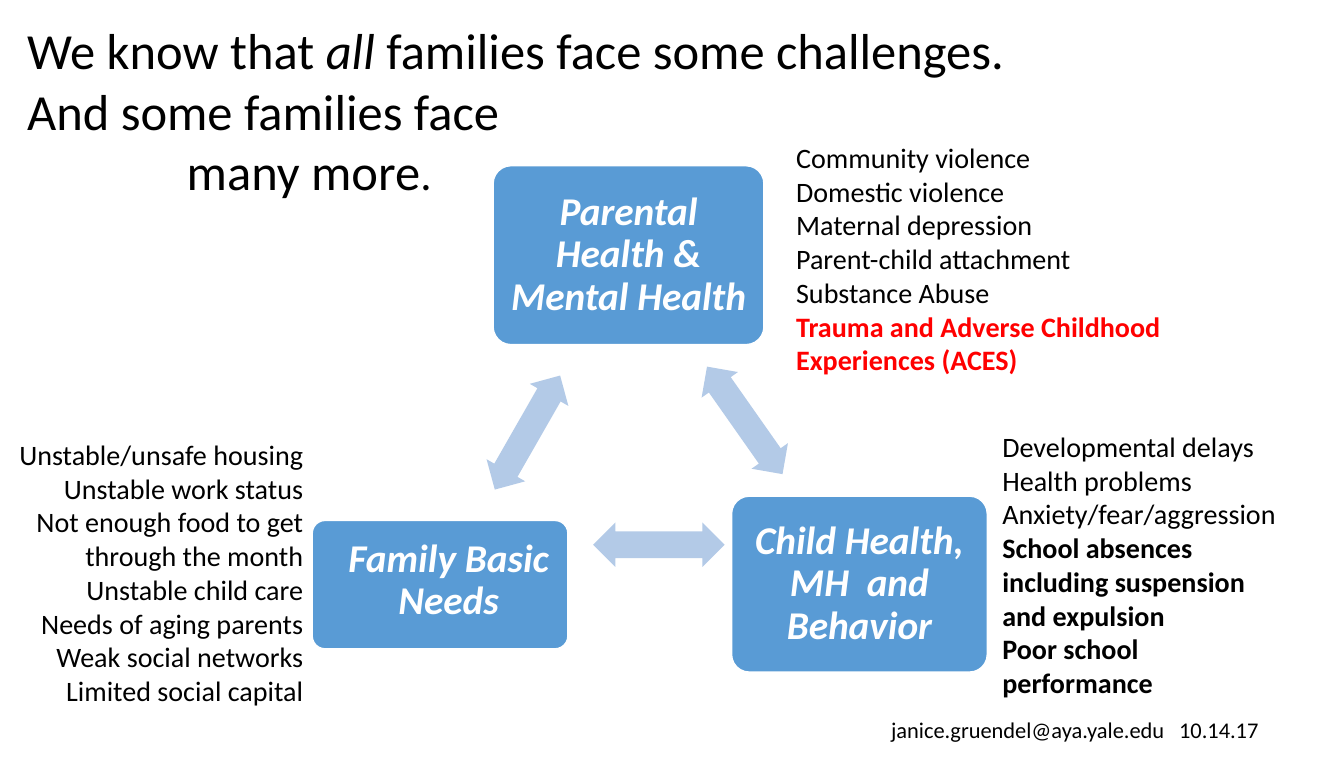
from lxml import etree
from pptx import Presentation
from pptx.dml.color import RGBColor
from pptx.enum import shapes, text
from pptx.oxml.ns import qn
from pptx.util import Inches, Pt

BLACK = RGBColor(0x00, 0x00, 0x00)
WHITE = RGBColor(0xFF, 0xFF, 0xFF)
RED = RGBColor(0xFF, 0x00, 0x00)
NODE_BLUE = RGBColor(0x59, 0x9B, 0xD5)
ARROW_BLUE = RGBColor(0xB3, 0xCA, 0xE7)
LEFT, CENTER, RIGHT = text.PP_ALIGN.LEFT, text.PP_ALIGN.CENTER, text.PP_ALIGN.RIGHT

deck = Presentation()
deck.slide_width, deck.slide_height = Inches(13.3), Inches(7.5)
slide = deck.slides.add_slide(deck.slide_layouts[6])


def add_run(paragraph, words, size, color=BLACK, bold=False, italic=False):
    run = paragraph.add_run()
    run.text = words
    run.font.name = "Calibri"
    run.font.size = Pt(size)
    run.font.color.rgb = color
    run.font.bold = bold
    run.font.italic = italic


def add_text(box, paragraphs, size, align=LEFT):
    """Each paragraph is a list of (words, run options)."""
    frame = slide.shapes.add_textbox(*map(Inches, box)).text_frame
    frame.word_wrap = True
    for index, runs in enumerate(paragraphs):
        paragraph = frame.add_paragraph() if index else frame.paragraphs[0]
        paragraph.alignment = align
        for words, options in runs:
            add_run(paragraph, words, size, **options)
    return frame


# Title, with its last line indented
title = add_text((0.17, 0.14, 10.23, 1.9), [
    [("We know that ", {}), ("all ", {"italic": True}),
     ("families face some challenges.", {})],
    [("And some families face", {})],
    [("many more", {})],
], 36)
add_run(title.paragraphs[2], ".", 32)
title.paragraphs[2]._p.get_or_add_pPr().set("marL", str(Inches(1.58)))

# Three linked areas of family life: words, box, insets (left, top, right, bottom)
even = (0.12, 0.12, 0.12, 0.12)
areas = [
    ("Parental Health & Mental Health", (4.88, 1.64, 2.68, 1.77), even),
    ("Child Health, MH  and Behavior", (7.24, 4.91, 2.53, 1.74), even),
    ("Family Basic Needs", (3.09, 5.15, 2.53, 1.27), (0.2, 0.08, 0.03, 0.16)),
]
for words, box, insets in areas:
    area = slide.shapes.add_shape(shapes.MSO_SHAPE.ROUNDED_RECTANGLE, *map(Inches, box))
    area.adjustments[0] = 0.1
    area.shadow.inherit = False
    area.fill.solid()
    area.fill.fore_color.rgb = NODE_BLUE
    area.line.color.rgb = WHITE
    area.line.width = Pt(1)
    frame = area.text_frame
    frame.word_wrap = True
    frame.vertical_anchor = text.MSO_ANCHOR.MIDDLE
    (frame.margin_left, frame.margin_top,
     frame.margin_right, frame.margin_bottom) = map(Inches, insets)
    label = frame.paragraphs[0]
    label.alignment = CENTER
    label.line_spacing = 0.9
    add_run(label, words, 28, WHITE, bold=True, italic=True)

# Double arrows between the areas
for left, top, angle in [(6.72, 3.94, 54.9), (5.87, 5.17, 180), (4.57, 4.06, 299.8)]:
    link = slide.shapes.add_shape(shapes.MSO_SHAPE.LEFT_RIGHT_ARROW, Inches(left),
                                  Inches(top), Inches(1.3), Inches(0.44))
    link.adjustments[0], link.adjustments[1] = 0.6, 0.5
    link.rotation = angle
    link.shadow.inherit = False
    link.fill.solid()
    link.fill.fore_color.rgb = ARROW_BLUE
    link.line.fill.background()

# Challenges listed beside each area
parental = ["Community violence", "Domestic violence", "Maternal depression",
            "Parent-child attachment", "Substance Abuse"]
add_text((7.78, 1.34, 5.2, 1.78),
         [[(item, {})] for item in parental]
         + [[("Trauma and Adverse Childhood Experiences (ACES)",
              {"color": RED, "bold": True})]], 20)

basic_needs = ["Unstable/unsafe housing", "Unstable work status",
               "Not enough food to get through the month", "Unstable child care",
               "Needs of aging parents", "Weak social networks Limited social capital"]
add_text((0.05, 4.28, 3.05, 3.2), [[(item, {})] for item in basic_needs], 20, RIGHT)

child = ["Developmental delays", "Health problems", "Anxiety/fear/aggression"]
school = ["School absences including suspension and expulsion",
          "Poor school performance"]
add_text((9.82, 4.2, 2.98, 2.46),
         [[(item, {})] for item in child]
         + [[(item, {"bold": True})] for item in school], 20)

# Contact and date, set apart by a tab stop
contact = add_text((8.72, 7.04, 4.4, 0.4), [[]], 16).paragraphs[0]
tabs = etree.SubElement(contact._p.get_or_add_pPr(), qn("a:tabLst"))
etree.SubElement(tabs, qn("a:tab"), pos=str(Inches(2.85)), algn="l")
add_run(contact, "janice.gruendel@aya.yale.edu\t10.14.17", 16)

deck.save("out.pptx")
